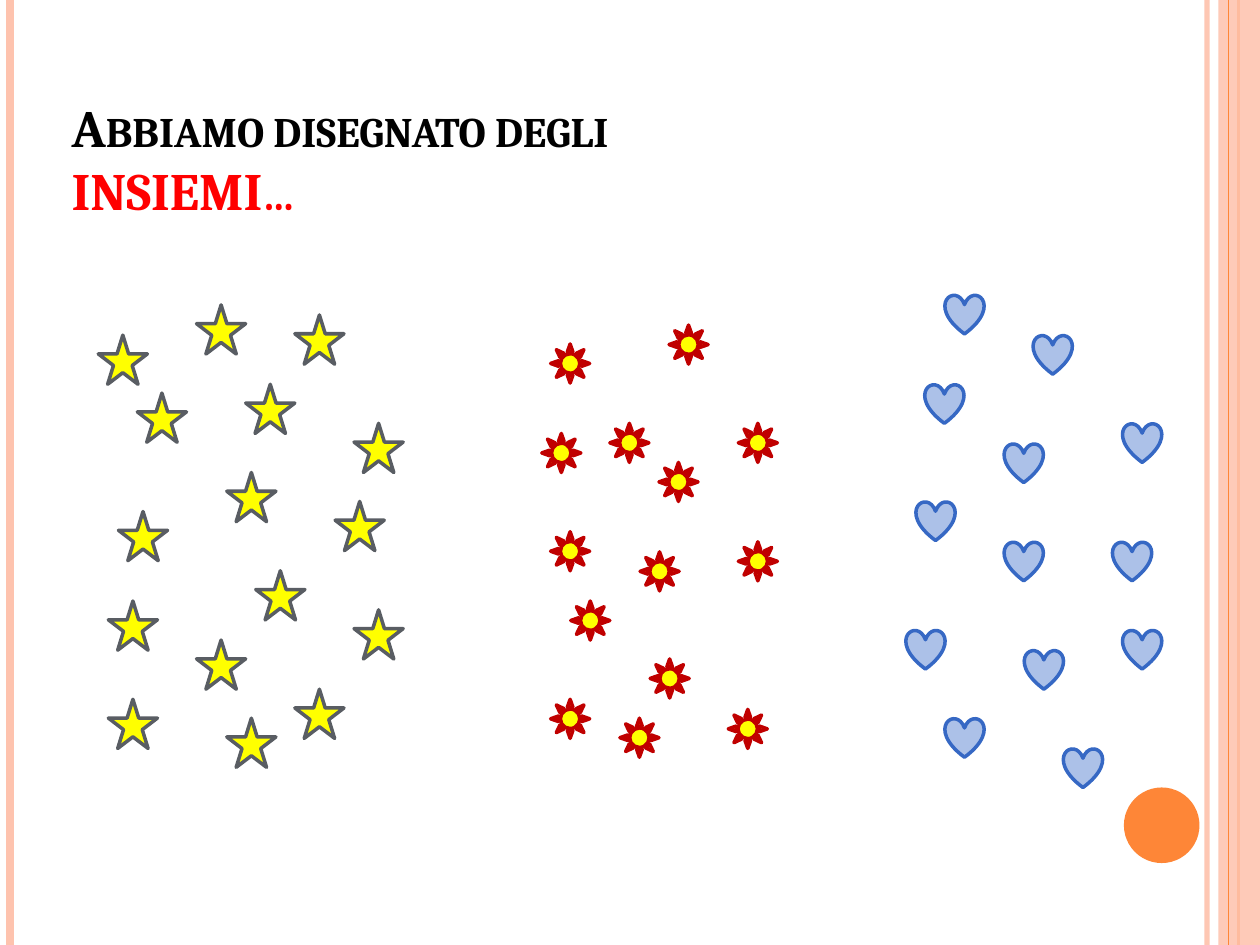
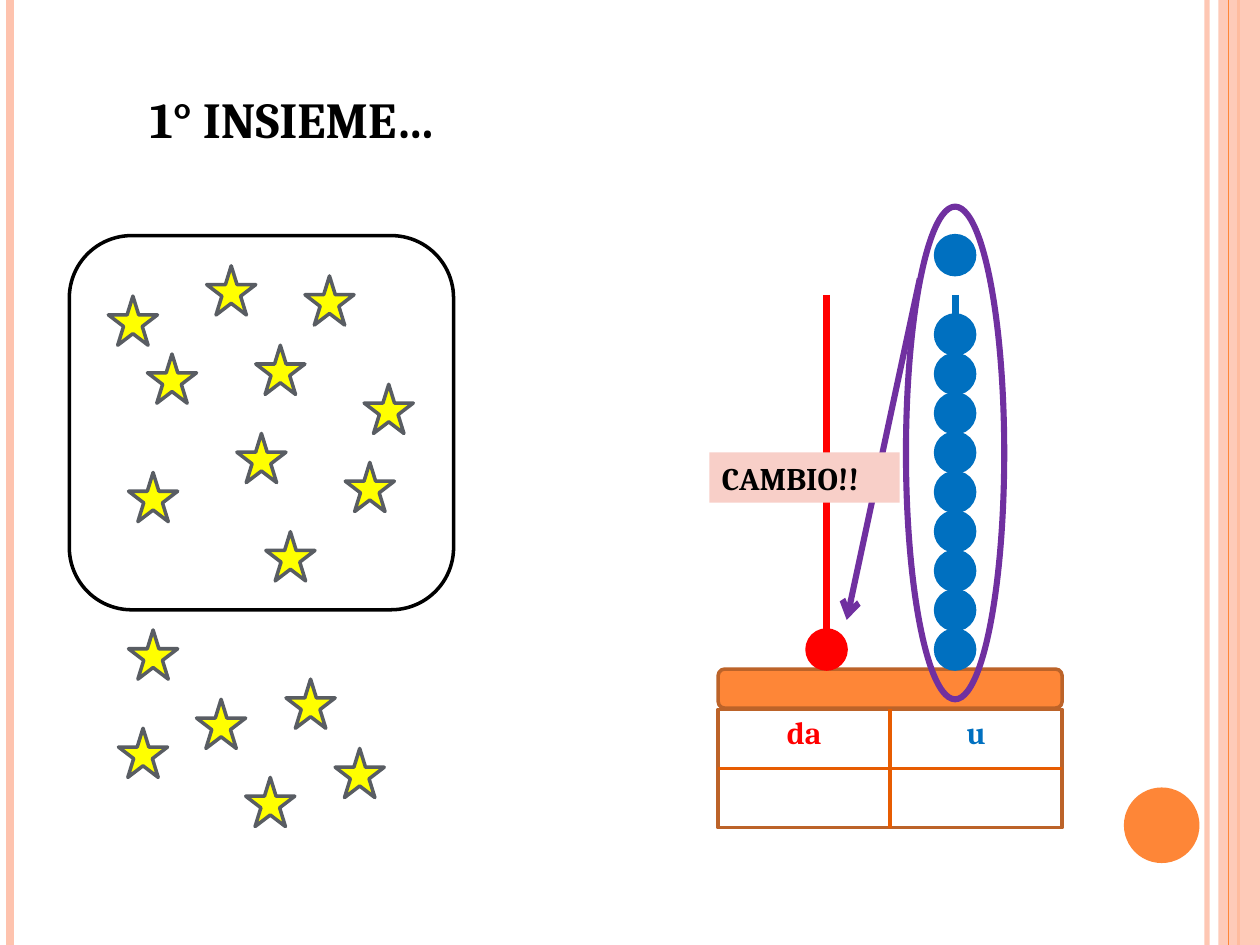
from typing import NamedTuple

from lxml import etree
from pptx import Presentation
from pptx.dml.color import RGBColor
from pptx.enum.shapes import MSO_CONNECTOR, MSO_SHAPE
from pptx.enum.text import MSO_ANCHOR, PP_ALIGN
from pptx.oxml.ns import qn
from pptx.util import Inches, Pt

STRAIGHT = MSO_CONNECTOR.STRAIGHT
RECT, ROUNDED = MSO_SHAPE.RECTANGLE, MSO_SHAPE.ROUNDED_RECTANGLE
OVAL, STAR = MSO_SHAPE.OVAL, MSO_SHAPE.STAR_5_POINT
SUN, HEART = MSO_SHAPE.SUN, MSO_SHAPE.HEART
LEFT, CENTER = PP_ALIGN.LEFT, PP_ALIGN.CENTER
TOP, BOTTOM = MSO_ANCHOR.TOP, MSO_ANCHOR.BOTTOM

FONT = "Cambria"
WIDTH, HEIGHT = 10, 7.5
COLORS = {
    "black": "000000", "white": "FFFFFF", "red": "FF0000", "blue": "0070C0",
    "purple": "7030A0", "orange": "FE8637", "peach": "FEC3AE",
    "brown": "BC6329", "grid": "E75C01", "pink": "F8CFC8",
    "yellow": "FFFF00", "gray": "595D63", "crimson": "C00000",
    "light_blue": "ACC1E8", "heart_blue": "3668C4",
}


class Item(NamedTuple):
    """How one element of a set looks."""
    kind: int
    size: float
    fill: str
    line: str


class Stripe(NamedTuple):
    """A vertical line at the side of every slide."""
    x: float
    color: str
    width: float
    alpha: int = 100


class Run(NamedTuple):
    text: str
    color: str = "black"


STAR_ITEM = Item(STAR, 0.39, "yellow", "gray")
FLOWER_ITEM = Item(SUN, 0.31, "yellow", "crimson")
HEART_ITEM = Item(HEART, 0.31, "light_blue", "heart_blue")

STRIPES_BEHIND = [Stripe(9.58, "peach", 3, 93), Stripe(0.08, "peach", 4.5),
                  Stripe(9.83, "orange", 1.5)]
STRIPE_ON_BAND = Stripe(9.75, "orange", 0.75)

# Ten stars that become one group of ten, and the six left over
TEN_STARS = [(0.94, 4.06), (1.09, 3.12), (1.8, 3.75), (2.66, 3.98),
             (2.03, 4.53), (1.56, 2.42), (1.95, 3.05), (2.34, 2.5),
             (2.81, 3.36), (0.78, 2.66)]
OTHER_STARS = [(1.56, 5.08), (0.86, 5.55), (2.34, 5.47), (2.81, 4.84),
               (1.8, 5.7), (0.86, 4.77)]
LEFTOVER_STARS = [(1.56, 5.55), (0.94, 5.78), (2.66, 5.94), (2.27, 5.39),
                  (1.95, 6.17), (1.02, 5)]
TEN_SHIFT = (0.08, -0.31)
FLOWERS = [(5.31, 2.58), (4.84, 3.36), (5.86, 3.36), (4.37, 2.73),
           (5.08, 4.38), (5.86, 4.3), (5.16, 5.23), (4.37, 5.55),
           (5.78, 5.63), (4.37, 4.22), (4.3, 3.44), (5.23, 3.67),
           (4.92, 5.7), (4.53, 4.77)]
HEARTS = [(7.34, 3.05), (8.91, 3.36), (8.2, 2.66), (7.97, 3.52),
          (8.83, 4.3), (7.27, 3.98), (8.91, 5), (7.97, 4.3), (7.19, 5),
          (8.13, 5.16), (7.5, 2.34), (7.5, 5.7), (8.44, 5.94)]


def rgb(color: str) -> RGBColor:
    return RGBColor.from_string(COLORS[color])


def set_alpha(properties, percent: int) -> None:
    """Make the first colour found in the properties see-through."""
    if percent < 100:
        color = next(properties.iter(qn("a:srgbClr")))
        etree.SubElement(color, qn("a:alpha"), val=str(percent * 1000))


def draw_shape(shapes, kind, x: float, y: float, w: float, h: float,
               fill: str = "", line: str = "", width: float = 2,
               alpha: int = 100):
    shape = shapes.add_shape(kind, Inches(x), Inches(y), Inches(w), Inches(h))
    shape.shadow.inherit = False
    if fill:
        shape.fill.solid()
        shape.fill.fore_color.rgb = rgb(fill)
        set_alpha(shape._element.spPr, alpha)
    else:
        shape.fill.background()
    if line:
        shape.line.color.rgb = rgb(line)
        shape.line.width = Pt(width)
    else:
        shape.line.fill.background()
    return shape


def draw_line(shapes, start: tuple, end: tuple, color: str,
              width: float = 2, alpha: int = 100, arrow: bool = False) -> None:
    line = shapes.add_connector(STRAIGHT, *map(Inches, start + end))
    line.line.color.rgb = rgb(color)
    line.line.width = Pt(width)
    properties = line._element.spPr
    set_alpha(properties, alpha)
    if arrow:
        etree.SubElement(properties.find(qn("a:ln")), qn("a:tailEnd"),
                         type="arrow")
    etree.SubElement(properties, qn("a:effectLst"))


def write_text(frame, lines: list[Run], size: float = 18, align=LEFT,
               anchor=TOP, small_caps: bool = False) -> None:
    """Write runs into one paragraph, each on its own line."""
    frame.word_wrap = True
    frame.vertical_anchor = anchor
    paragraph = frame.paragraphs[0]
    paragraph.alignment = align
    for index, line in enumerate(lines):
        if index:
            paragraph.add_line_break()
        run = paragraph.add_run()
        run.text = line.text
        run.font.name = FONT
        run.font.size = Pt(size)
        run.font.bold = True
        run.font.color.rgb = rgb(line.color)
        if small_caps:
            run.font._element.set("cap", "small")


def draw_title(shapes, box: tuple, lines: list[Run], size: float) -> None:
    title = shapes.add_textbox(*map(Inches, box))
    write_text(title.text_frame, lines, size=size, anchor=BOTTOM,
               small_caps=True)


def draw_set(shapes, item: Item, places: list[tuple]) -> None:
    """Draw one set as a group of equal items."""
    members = shapes.add_group_shape().shapes
    for x, y in places:
        draw_shape(members, item.kind, x, y, item.size, item.size,
                   item.fill, item.line)


def draw_stripe(shapes, stripe: Stripe) -> None:
    draw_line(shapes, (stripe.x, 0), (stripe.x, HEIGHT), stripe.color,
              stripe.width, stripe.alpha)


def new_slide(deck):
    """Add a slide with the shared stripes, side band and disc."""
    shapes = deck.slides.add_slide(deck.slide_layouts[6]).shapes
    for stripe in STRIPES_BEHIND:
        draw_stripe(shapes, stripe)
    draw_shape(shapes, RECT, 9.67, 0, 0.33, HEIGHT, "peach", alpha=87)
    draw_stripe(shapes, STRIPE_ON_BAND)
    draw_shape(shapes, OVAL, 8.92, 6.25, 0.6, 0.6, "orange")
    return shapes


def draw_sets_slide(deck) -> None:
    shapes = new_slide(deck)
    draw_title(shapes, (0.47, 0.55, 9, 1.25),
               [Run("Abbiamo disegnato degli"), Run("INSIEMI…", "red")], 30)
    draw_set(shapes, STAR_ITEM, TEN_STARS + OTHER_STARS)
    draw_set(shapes, FLOWER_ITEM, FLOWERS)
    draw_set(shapes, HEART_ITEM, HEARTS)


def draw_place_values(shapes, x: float, y: float, w: float, h: float) -> None:
    """Draw the table of tens and units with its grid on top."""
    table = shapes.add_table(2, 2, Inches(x), Inches(y), Inches(w),
                             Inches(h)).table
    for row in table.rows:
        for cell in row.cells:
            cell.fill.solid()
            cell.fill.fore_color.rgb = rgb("white")
    for column, heading in enumerate([Run("da", "red"), Run("u", "blue")]):
        write_text(table.cell(0, column).text_frame, [heading], align=CENTER)
    draw_shape(shapes, RECT, x, y, w, h, line="brown")
    draw_line(shapes, (x + w / 2, y), (x + w / 2, y + h), "grid")
    draw_line(shapes, (x, y + h / 2), (x + w, y + h / 2), "grid")


def draw_abacus(shapes) -> None:
    bead, tens_x, units_x = 0.31, 6.56, 7.58
    rod_top, base_x, base_y, base_w = 2.34, 5.7, 5.31, 2.73

    def draw_bead(rod_x: float, y: float, color: str) -> None:
        draw_shape(shapes, OVAL, rod_x - bead / 2, y, bead, bead, color, color)

    # Rods, base and table
    for rod_x, color in ((tens_x, "red"), (units_x, "blue")):
        draw_line(shapes, (rod_x, rod_top), (rod_x, base_y), color, 4)
    draw_shape(shapes, ROUNDED, base_x, base_y, base_w, 0.31,
               "orange", "brown")
    draw_place_values(shapes, base_x, 5.63, base_w, 0.94)

    # Nine units on the rod and the tenth above it
    for count in range(9):
        draw_bead(units_x, 5 - count * 0.3125, "blue")
    draw_bead(units_x, 1.87, "blue")

    # Ten units change into one ten
    draw_line(shapes, (7.3, 2.21), (6.72, 4.92), "purple", 3.5, arrow=True)
    draw_shape(shapes, OVAL, 7.19, 1.64, 0.78, 3.91, line="purple", width=3.5)
    draw_bead(tens_x, 5, "red")
    change = draw_shape(shapes, RECT, 5.63, 3.59, 1.51, 0.4, "pink")
    write_text(change.text_frame, [Run("CAMBIO!!")])


def draw_first_set_slide(deck) -> None:
    shapes = new_slide(deck)
    draw_title(shapes, (1.09, 0.31, 3.75, 0.94), [Run("1° insieme…")], 36)
    dx, dy = TEN_SHIFT
    grouped_ten = [(x + dx, y + dy) for x, y in TEN_STARS]
    draw_set(shapes, STAR_ITEM, grouped_ten + LEFTOVER_STARS)
    draw_shape(shapes, ROUNDED, 0.55, 1.87, 3.05, 2.97, line="black")
    draw_abacus(shapes)


def main() -> None:
    deck = Presentation()
    deck.slide_width, deck.slide_height = Inches(WIDTH), Inches(HEIGHT)
    draw_sets_slide(deck)
    draw_first_set_slide(deck)
    deck.save("out.pptx")


if __name__ == "__main__":
    main()
